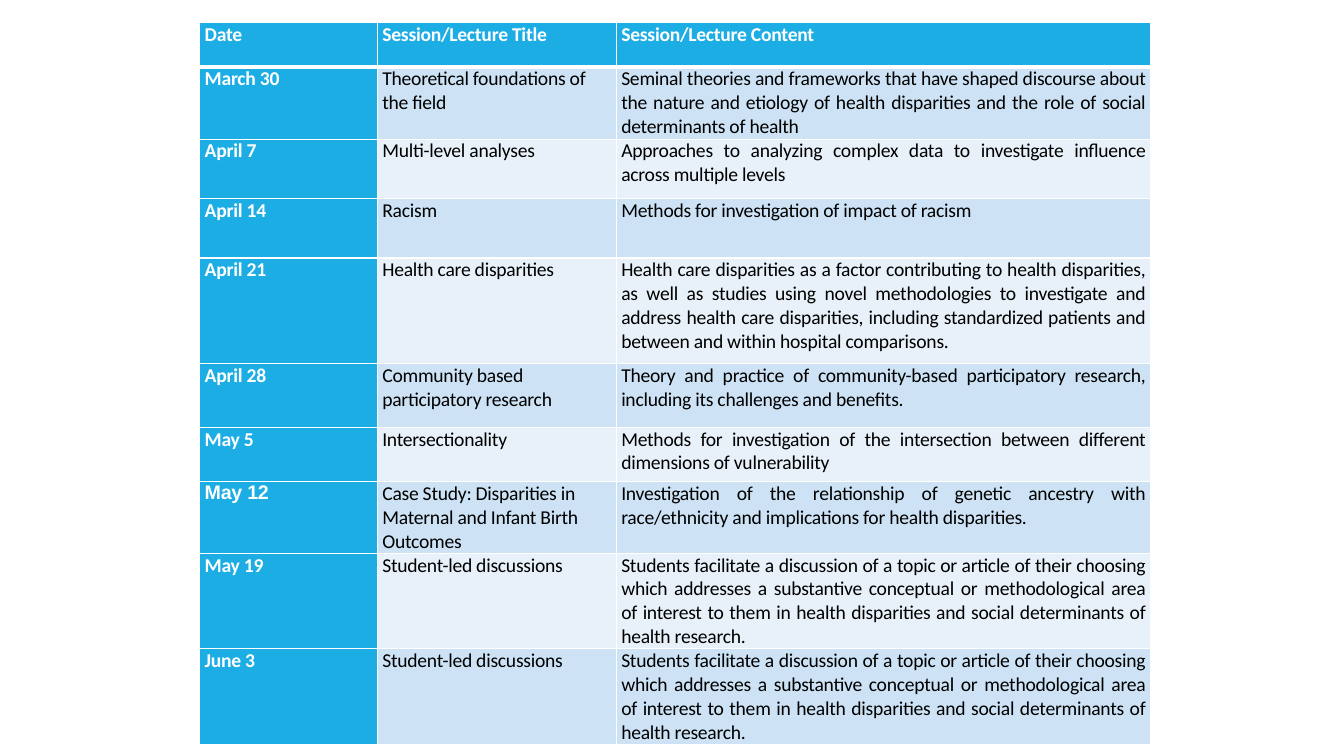
from dataclasses import dataclass

from lxml.etree import SubElement
from pptx import Presentation
from pptx.dml.color import RGBColor
from pptx.enum.text import PP_ALIGN
from pptx.oxml.ns import qn
from pptx.table import _Cell
from pptx.util import Pt

COLORS = {
    "accent": "1CADE4",
    "band_dark": "CDE3F5",
    "band_light": "E8F1FA",
    "white": "FFFFFF",
    "black": "000000",
}
MARGINS = {
    "margin_left": Pt(3.6),
    "margin_right": Pt(3.6),
    "margin_top": Pt(0),
    "margin_bottom": Pt(0),
}
COLUMN_WIDTHS = [126.9, 170.7, 381.6]
THIN, THICK = 1, 3


@dataclass
class Session:
    date: str
    title: str
    content: str
    height: float
    date_font: str = "Calibri"


STUDENT_TITLE = "Student-led discussions"
STUDENT_CONTENT = (
    "Students facilitate a discussion of a topic or article of their choosing "
    "which addresses a substantive conceptual or methodological area of interest "
    "to them in health disparities and social determinants of health research."
)

SESSIONS = [
    Session("Date", "Session/Lecture Title", "Session/Lecture Content", 31.8),
    Session("March 30", "Theoretical foundations of the field",
            "Seminal theories and frameworks that have shaped discourse about the "
            "nature and etiology of health disparities and the role of social "
            "determinants of health", 51.6),
    Session("April 7", "Multi-level analyses",
            "Approaches to analyzing complex data to investigate influence across "
            "multiple levels", 42.5),
    Session("April 14", "Racism",
            "Methods for investigation of impact of racism", 42.5),
    Session("April 21", "Health care disparities",
            "Health care disparities as a factor contributing to health disparities, "
            "as well as studies using novel methodologies to investigate and address "
            "health care disparities, including standardized patients and between "
            "and within hospital comparisons.", 75.6),
    Session("April 28", "Community based participatory research",
            "Theory and practice of community-based participatory research, "
            "including its challenges and benefits.", 45.4),
    Session("May 5", "Intersectionality",
            "Methods for investigation of the intersection between different "
            "dimensions of vulnerability", 38.9),
    Session("May 12", "Case Study: Disparities in Maternal and Infant Birth Outcomes",
            "Investigation of the relationship of genetic ancestry with "
            "race/ethnicity and implications for health disparities.", 38.9, "Arial"),
    Session("May 19", STUDENT_TITLE, STUDENT_CONTENT, 64.8),
    Session("June 3", STUDENT_TITLE, STUDENT_CONTENT, 64.8),
]


def rgb(name: str) -> RGBColor:
    return RGBColor.from_string(COLORS[name])


def set_borders(cell: _Cell, top: float, bottom: float) -> None:
    tc_pr = cell._tc.get_or_add_tcPr()
    for side, width in {"L": THIN, "R": THIN, "T": top, "B": bottom}.items():
        ln = SubElement(tc_pr, qn(f"a:ln{side}"), w=str(Pt(width)))
        fill = SubElement(ln, qn("a:solidFill"))
        SubElement(fill, qn("a:srgbClr"), val=COLORS["white"])


def write_cell(cell: _Cell, text: str, font: str, bold: bool,
               fill: str, align: PP_ALIGN) -> None:
    for name, value in MARGINS.items():
        setattr(cell, name, value)
    cell.fill.solid()
    cell.fill.fore_color.rgb = rgb(fill)
    p = cell.text_frame.paragraphs[0]
    p.alignment = align
    r = p.add_run()
    r.text = text
    for name, value in {"name": font, "size": Pt(14), "bold": bold}.items():
        setattr(r.font, name, value)
    r.font.color.rgb = rgb("white" if bold else "black")
    r._r.get_or_add_rPr().set("spc", "-20")


def add_schedule(slide, left: float, top: float, sessions: list[Session]) -> None:
    width, height = sum(COLUMN_WIDTHS), sum(s.height for s in sessions)
    table = slide.shapes.add_table(len(sessions), len(COLUMN_WIDTHS), Pt(left),
                                   Pt(top), Pt(width), Pt(height)).table
    for column, column_width in zip(table.columns, COLUMN_WIDTHS):
        column.width = Pt(column_width)
    for i, session in enumerate(sessions):
        table.rows[i].height = Pt(session.height)
        band = "band_dark" if i % 2 else "band_light"
        for j, text in enumerate([session.date, session.title, session.content]):
            cell = table.cell(i, j)
            heading = i == 0 or j == 0
            set_borders(cell, THICK if i == 1 else THIN, THICK if i == 0 else THIN)
            write_cell(cell, text, session.date_font if j == 0 else "Calibri", heading,
                       "accent" if heading else band,
                       PP_ALIGN.JUSTIFY if j == 2 else PP_ALIGN.LEFT)


def main() -> None:
    prs = Presentation()
    prs.slide_width, prs.slide_height = Pt(960), Pt(540)
    # Blank layout: the slide has no title
    slide = prs.slides.add_slide(prs.slide_layouts[6])
    # Course schedule
    add_schedule(slide, 142.6, 16, SESSIONS)
    prs.save("out.pptx")


if __name__ == "__main__":
    main()
